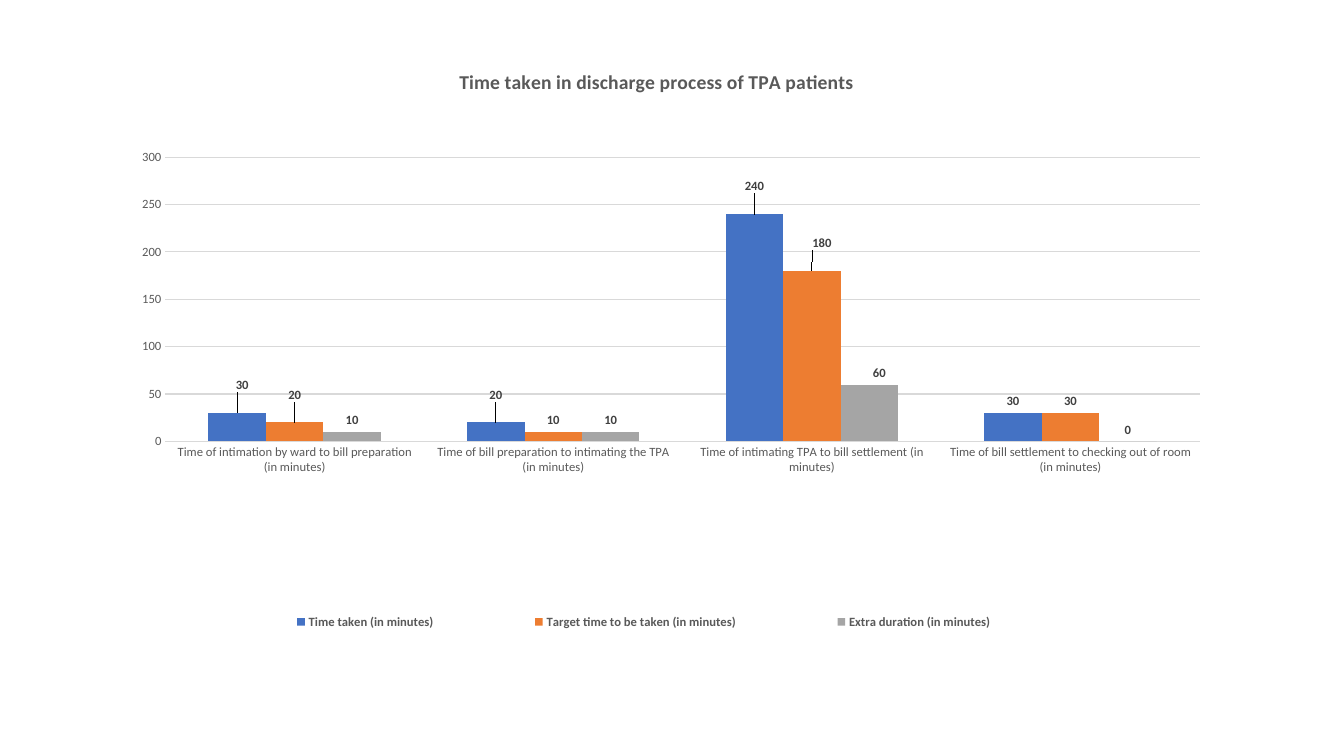
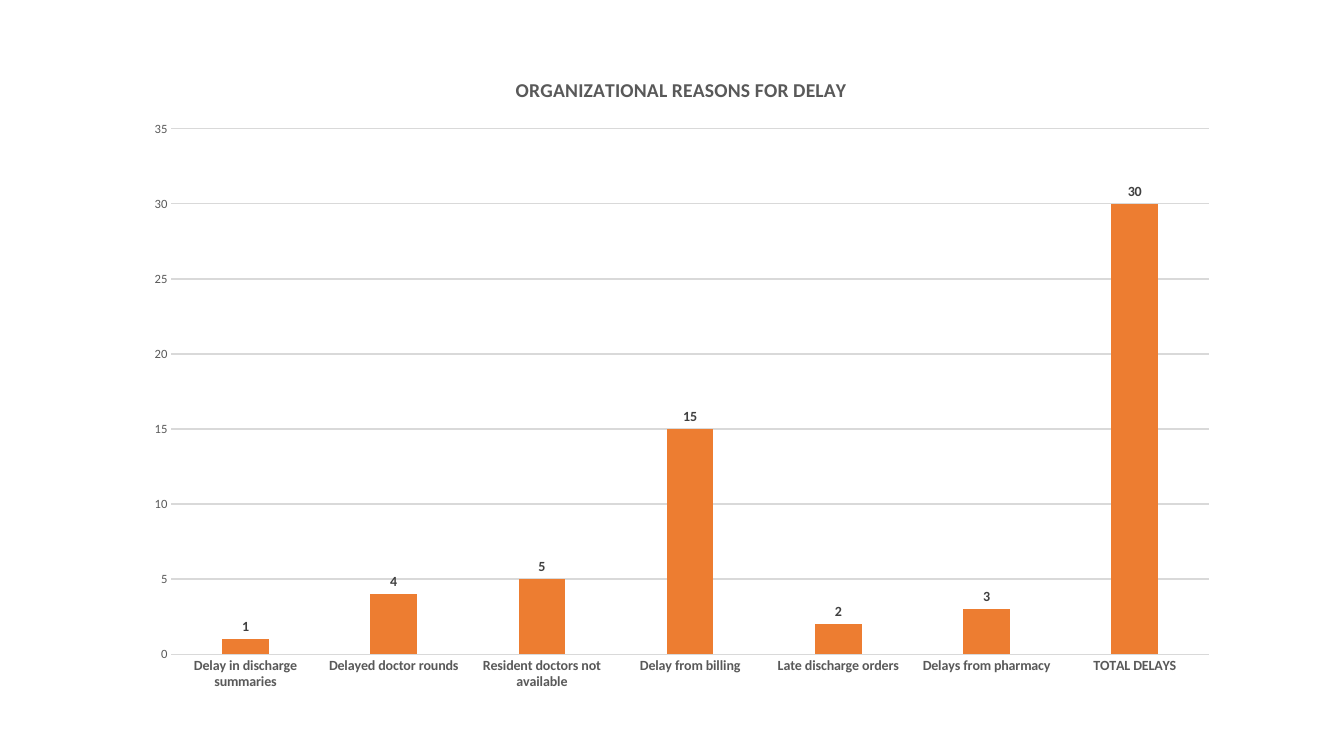
from lxml import etree
from pptx import Presentation
from pptx.chart.data import CategoryChartData
from pptx.dml.color import RGBColor
from pptx.enum.chart import XL_CHART_TYPE, XL_LABEL_POSITION, XL_LEGEND_POSITION, XL_TICK_MARK
from pptx.oxml.ns import qn
from pptx.util import Inches, Pt

COLUMNS = XL_CHART_TYPE.COLUMN_CLUSTERED
OUTSIDE_END = XL_LABEL_POSITION.OUTSIDE_END
LEGEND_BOTTOM = XL_LEGEND_POSITION.BOTTOM
NO_TICK = XL_TICK_MARK.NONE

FONT = "Calibri"
BLUE, ORANGE, GRAY = "4472C4", "ED7D31", "A5A5A5"
TEXT, LABEL, GRID, BLACK = "595959", "404040", "D9D9D9", "000000"
TITLE_FORMAT = {"size": Pt(14), "bold": True}
AXIS_FORMAT = {"size": Pt(9), "bold": False}

DISCHARGE = {
    "box": (0.82, 0.47, 11.43, 6.35),
    "title": "Time taken in discharge process of TPA patients",
    "title_at": (3.7, 0.17),
    "plot_at": (0.82, 1.09, 10.26, 2.82),
    "legend_at": (1.16, 5.45, 8.81, 0.5),
    "categories": [
        "Time of intimation by ward to bill preparation (in minutes)",
        "Time of bill preparation to intimating the TPA (in minutes)",
        "Time of intimating TPA to bill settlement (in minutes)",
        "Time of bill settlement to checking out of room (in minutes)",
    ],
    "series": [
        ("Time taken (in minutes)", (30, 20, 240, 30), BLUE),
        ("Target time to be taken (in minutes)", (20, 10, 180, 30), ORANGE),
        ("Extra duration (in minutes)", (10, 10, 60, 0), GRAY),
    ],
    "label_shifts": [
        {0: (0.05, -0.16), 1: (0, -0.16), 2: (0, -0.16)},
        {0: (0, -0.16), 2: (0.1, -0.16)},
        {2: (0.1, 0)},
    ],
    "scale": {"minimum_scale": 0, "maximum_scale": 300, "major_unit": 50},
    "spacing": {"gap_width": 150, "overlap": 0},
    "category_format": AXIS_FORMAT,
    "category_line": None,
    "label_format": {"size": Pt(9), "bold": True},
}

DELAYS = {
    "box": (1.31, 0.56, 10.9, 6.41),
    "title": "ORGANIZATIONAL REASONS FOR DELAY",
    "title_at": (3.77, 0.16),
    "plot_at": (0.39, 0.72, 10.29, 5.21),
    "legend_at": None,
    "categories": [
        "Delay in discharge summaries",
        "Delayed doctor rounds",
        "Resident doctors not available",
        "Delay from billing",
        "Late discharge orders",
        "Delays from pharmacy",
        "TOTAL DELAYS",
    ],
    "series": [("Series 1", (1, 4, 5, 15, 2, 3, 30), ORANGE)],
    "label_shifts": [{}],
    "scale": {"minimum_scale": 0, "maximum_scale": 35, "major_unit": 5},
    "spacing": {"gap_width": 219, "overlap": -27},
    "category_format": {"size": Pt(10), "bold": True},
    "category_line": GRID,
    "label_format": {"size": Pt(10), "bold": True},
}


def rgb(value):
    """Return the colour for a hex string."""
    return RGBColor.from_string(value)


def set_attributes(target, values):
    """Set every named attribute of the target."""
    for name, value in values.items():
        setattr(target, name, value)


def format_font(font, values, color=TEXT):
    """Give a font the shared face, a colour and the listed values."""
    font.name = FONT
    font.color.rgb = rgb(color)
    set_attributes(font, values)


def format_line(line, color):
    """Draw a thin line, or none when no colour is given."""
    if color:
        line.color.rgb = rgb(color)
        line.width = Pt(0.75)
    else:
        line.fill.background()


def place(element, lengths, box, is_offset=False):
    """Position a chart part by lengths in inches within the chart box."""
    for old_layout in element.findall(qn("c:layout")):
        element.remove(old_layout)
    is_plot = element.tag == qn("c:plotArea")
    layout = etree.Element(qn("c:layout"))
    manual = etree.SubElement(layout, qn("c:manualLayout"))
    settings = {"layoutTarget": "inner"} if is_plot else {}
    if not is_offset:
        settings.update(xMode="edge", yMode="edge")
    for name, length, whole in zip("xywh", lengths, box[2:] * 2):
        settings[name] = str(length / whole)
    for name, value in settings.items():
        etree.SubElement(manual, qn(f"c:{name}")).set("val", value)
    element.insert(0 if is_plot else 1, layout)


def add_title(chart, content):
    """Add the chart title."""
    chart.has_title = True
    paragraph = chart.chart_title.text_frame.paragraphs[0]
    run = paragraph.add_run()
    run.text = content["title"]
    format_font(run.font, TITLE_FORMAT)
    place(chart.chart_title._element, content["title_at"], content["box"])


def format_axes(chart, content):
    """Style both axes and the gridlines."""
    category_axis, value_axis = chart.category_axis, chart.value_axis
    styles = (
        (category_axis, content["category_format"], content["category_line"]),
        (value_axis, AXIS_FORMAT, None),
    )
    for axis, font_format, line_color in styles:
        set_attributes(axis, {"major_tick_mark": NO_TICK, "minor_tick_mark": NO_TICK})
        format_font(axis.tick_labels.font, font_format)
        format_line(axis.format.line, line_color)
    set_attributes(value_axis, content["scale"])
    value_axis.has_major_gridlines = True
    format_line(value_axis.major_gridlines.format.line, GRID)


def format_series(series, color, shifts, content):
    """Colour one series and place its value labels."""
    series.format.fill.solid()
    series.format.fill.fore_color.rgb = rgb(color)
    series.invert_if_negative = False
    labels = series.data_labels
    set_attributes(labels, {"show_value": True, "position": OUTSIDE_END})
    format_font(labels.font, content["label_format"], LABEL)
    for index, shift in shifts.items():
        label = series.points[index].data_label
        label.position = OUTSIDE_END
        format_font(label.font, content["label_format"], LABEL)
        element = series._element.xpath(f"c:dLbls/c:dLbl[c:idx/@val='{index}']")[0]
        place(element, shift, content["box"], is_offset=True)


def add_legend(chart, content):
    """Add the legend below the columns."""
    chart.has_legend = True
    set_attributes(chart.legend, {"position": LEGEND_BOTTOM, "include_in_layout": False})
    format_font(chart.legend.font, {"size": Pt(9), "bold": True})
    place(chart.legend._element, content["legend_at"], content["box"])


def add_column_slide(presentation, content):
    """Add a slide that holds one column chart."""
    slide = presentation.slides.add_slide(presentation.slide_layouts[6])
    data = CategoryChartData()
    data.categories = content["categories"]
    for name, values, _ in content["series"]:
        data.add_series(name, values)
    box = content["box"]
    chart = slide.shapes.add_chart(COLUMNS, *map(Inches, box), data).chart
    format_font(chart.font, {"size": Pt(10)}, BLACK)
    add_title(chart, content)
    format_axes(chart, content)
    plot = chart.plots[0]
    set_attributes(plot, {"vary_by_categories": False, **content["spacing"]})
    for series, (_, _, color), shifts in zip(plot.series, content["series"], content["label_shifts"]):
        format_series(series, color, shifts, content)
    plot_area = chart._chartSpace.find(".//" + qn("c:plotArea"))
    place(plot_area, content["plot_at"], box)
    chart.has_legend = False
    if content["legend_at"]:
        add_legend(chart, content)


def main():
    """Build and save the presentation."""
    presentation = Presentation()
    presentation.slide_width = Inches(13.33)
    presentation.slide_height = Inches(7.5)
    for content in (DISCHARGE, DELAYS):
        add_column_slide(presentation, content)
    presentation.save("out.pptx")


if __name__ == "__main__":
    main()
